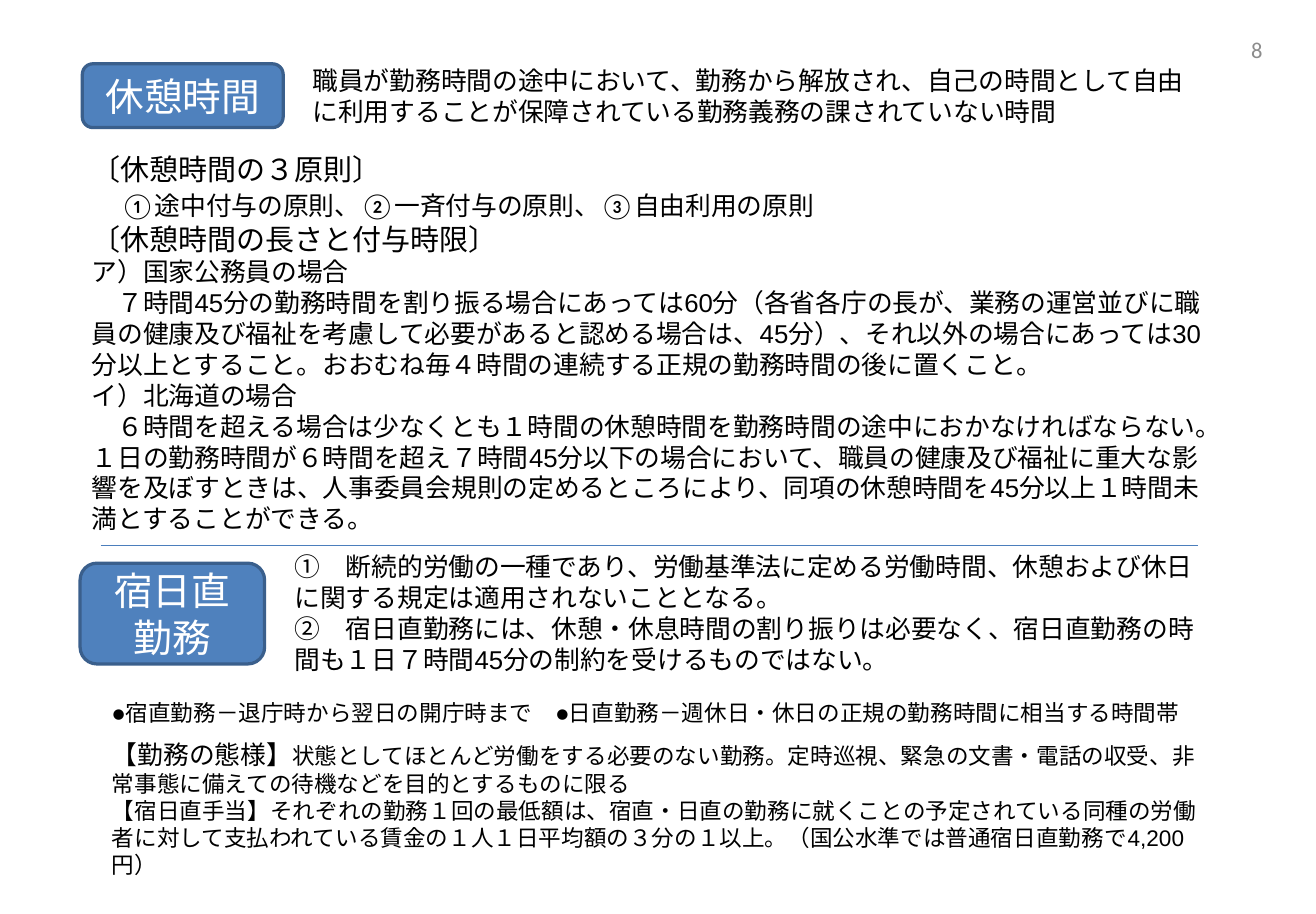
from dataclasses import dataclass

from lxml import etree
from pptx import Presentation, util as u
from pptx.dml.color import RGBColor
from pptx.enum import lang, shapes, text
from pptx.oxml import ns

Pt = u.Pt
BLACK = RGBColor(0, 0, 0)
WHITE = RGBColor(255, 255, 255)
GRAY = RGBColor(0x8C, 0x8C, 0x8C)
BLUE = RGBColor(0x4F, 0x81, 0xBD)
EDGE = RGBColor(0x3A, 0x5F, 0x8C)
RULE = RGBColor(0x4B, 0x7E, 0xBC)
CENTER = text.PP_ALIGN.CENTER
MIDDLE = text.MSO_ANCHOR.MIDDLE
TOP = text.MSO_ANCHOR.TOP
LEFT = 49.7
INNER = 62.4
SPLIT = 338.6


@dataclass
class Run:
    text: str
    size: float = 16
    font: str = "Calibri"


@dataclass
class Box:
    x: float
    y: float
    w: float
    h: float
    paras: list[list[Run]]
    inset: float = 7.2

    def frame(self) -> tuple[int, int, int, int]:
        return Pt(self.x), Pt(self.y), Pt(self.w), Pt(self.h)


def arial(words: str, size: float = 16) -> Run:
    return Run(words, size, "Arial")


def write(shape, box: Box, *, color=BLACK, align=text.PP_ALIGN.LEFT,
          anchor=TOP) -> None:
    frame = shape.text_frame
    frame.word_wrap = True
    frame.auto_size = text.MSO_AUTO_SIZE.NONE
    frame.vertical_anchor = anchor
    frame.margin_right = Pt(box.inset)
    for i, runs in enumerate(box.paras):
        para = frame.add_paragraph() if i else frame.paragraphs[0]
        para.alignment = align
        para.space_before = Pt(0)
        for item in runs:
            run = para.add_run()
            run.text = item.text
            run.font.size = Pt(item.size)
            run.font.name = item.font
            run.font.color.rgb = color
            run.font.language_id = lang.MSO_LANGUAGE_ID.JAPANESE
            east = etree.SubElement(run.font._element, ns.qn("a:ea"))
            east.set("typeface", item.font)


def unlist(frame) -> None:
    """Drop the bullets and indents a body placeholder inherits."""
    for para in frame.paragraphs:
        props = para._p.get_or_add_pPr()
        props.set("marL", "0")
        props.set("indent", "0")
        etree.SubElement(props, ns.qn("a:buNone"))


def badge(slide, box: Box) -> None:
    shape = slide.shapes.add_shape(
        shapes.MSO_SHAPE.ROUNDED_RECTANGLE, *box.frame())
    shape.shadow.inherit = False
    shape.fill.solid()
    shape.fill.fore_color.rgb = BLUE
    shape.line.color.rgb = EDGE
    shape.line.width = Pt(2)
    write(shape, box, color=WHITE, align=CENTER, anchor=MIDDLE)


def label(slide, box: Box, **style) -> None:
    write(slide.shapes.add_textbox(*box.frame()), box, **style)


def rule(slide, x1: float, x2: float, y: float) -> None:
    line = slide.shapes.add_connector(
        shapes.MSO_CONNECTOR.STRAIGHT, Pt(x1), Pt(y), Pt(x2), Pt(y))
    line.line.color.rgb = RULE
    line.line.width = Pt(0.75)
    etree.SubElement(line._element.spPr, ns.qn("a:effectLst"))


PAGE = Box(761.8, 15.8, 36, 29.5, [[Run("8", 14)]])
BADGES = [
    Box(51.1, 39.6, 124.6, 39.6, [[Run("休憩時間", 24)]]),
    Box(LEFT, 349.6, 114.5, 62.6, [[Run("宿日直勤務", 24)]]),
]
RULES = Box(LEFT, 90.4, 715.7, 247, [
    [Run("〔休憩時間の３原則〕", 18)],
    [Run("　", 18), Run("①途中付与の原則、②一斉付与の原則、③自由利用の原則")],
    [Run("〔休憩時間の長さと付与時限〕", 18)],
    [arial("ア）国家公務員の場合")],
    [arial("　７時間45分の勤務時間を割り振る場合にあっては60分（各省各庁の長が、"
           "業務の運営並びに職員の健康及び福祉を考慮して必要があると認める場合は、"
           "45分）、それ以外の場合にあっては30分以上とすること。"),
     Run("おおむね毎４時間の連続する正規の勤務時間の後に置くこと。")],
    [arial("イ）北海道の場合")],
    [arial("　６時間を超える場合は少なくとも１時間の休憩時間を勤務時間の途中に"
           "おかなければならない。１日の勤務時間が６時間を超え７時間45分以下の場合に"
           "おいて、職員の健康及び福祉に重大な影響を及ぼすときは、人事委員会規則の"
           "定めるところにより、同項の休憩時間を45分以上１時間未満とすることができる。")],
])
NOTES = [
    Box(186.9, 36.7, 566.6, 46.1, [
        [Run("職員が勤務時間の途中において、勤務から解放され、自己の時間として自由に"
             "利用することが保障されている勤務義務の課されていない時間")]]),
    Box(175.7, 338.4, 578.2, 85, [
        [arial("①　断続的労働の一種であり、労働基準法に定める労働時間、休憩および休日に"
               "関する規定は適用されないこととなる。")],
        [arial("②　宿日直勤務には、休憩・休息時間の割り振りは必要なく、宿日直勤務の"
               "時間も１日７時間45分の制約を受けるものではない。")]]),
    Box(INNER, 430.6, 680.4, 24.5, [
        [Run("●宿直勤務－退庁時から翌日の開庁時まで　●日直勤務－週休日・休日の"
             "正規の勤務時間に相当する時間帯", 14)]], inset=0),
    Box(INNER, 455, 691.9, 77.8, [
        [Run("【勤務の態様】"),
         Run("状態としてほとんど労働をする必要のない勤務。定時巡視、緊急の文書・電話の"
             "収受、非常事態に備えての待機などを目的とするものに限る", 14)],
        [Run("【宿日直手当】それぞれの勤務１回の最低額は、宿直・日直の勤務に就くことの"
             "予定されている同種の労働者に対して支払われている賃金の１人１日平均額の"
             "３分の１以上。（国公水準では普通宿日直勤務", 14),
         arial("で4,200円）", 14)]]),
]


def main() -> None:
    deck = Presentation()
    deck.slide_width, deck.slide_height = Pt(816.48), Pt(567.36)
    slide = deck.slides.add_slide(deck.slide_layouts[1])
    title, body = slide.placeholders
    title._element.getparent().remove(title._element)

    body.left, body.top, body.width, body.height = RULES.frame()
    write(body, RULES)
    unlist(body.text_frame)

    label(slide, PAGE, color=GRAY, align=CENTER, anchor=MIDDLE)
    for box in BADGES:
        badge(slide, box)
    for note in NOTES:
        label(slide, note)
    rule(slide, INNER, 743, SPLIT)
    deck.save("out.pptx")


if __name__ == "__main__":
    main()
